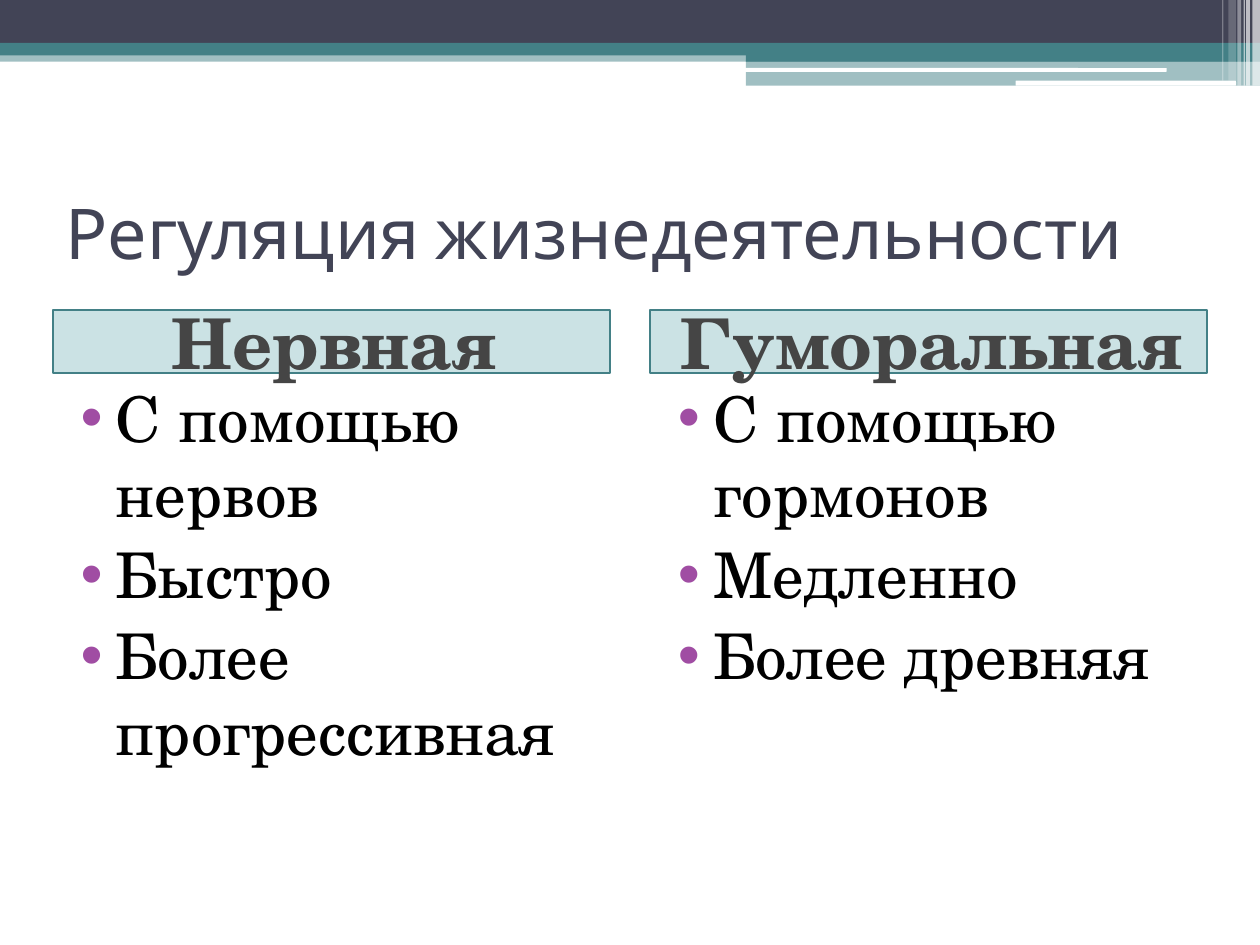
from pptx import Presentation
from pptx.dml.color import RGBColor
from pptx.enum.shapes import MSO_SHAPE as Shape
from pptx.enum.text import MSO_ANCHOR as Anchor, MSO_AUTO_SIZE as Fit, PP_ALIGN as Align
from pptx.oxml.ns import qn
from pptx.util import Inches, Pt
from lxml.etree import SubElement as Sub

TEAL, DARK, WHITE = "438086", "424456", "FFFFFF"
SERIF = "TeX Gyre Schola"
BANDS = [
    (0, 0.4, 10, 0.09, TEAL, 50),
    (0, 0, 10, 0.34, DARK, 100),
    (0, 0.34, 10, 0.1, TEAL, 100),
    (5.92, 0.39, 4.08, 0.1, TEAL, 100),
    (5.92, 0.48, 4.08, 0.2, TEAL, 50),
]
LINES = [(5.91, 0.54, 3.35, 0.03), (8.06, 0.64, 1.75, 0.04)]
STRIPES = [
    (9.94, 0.06, 0.68, 65),
    (9.89, 0.03, 0.68, 65),
    (9.87, 0.01, 0.68, 60),
    (9.82, 0.03, 0.68, 40),
    (9.75, 0.06, 0.64, 20),
    (9.7, 0.01, 0.64, 30),
]
COLUMNS = [
    (0.42, "Нервная", ["С помощью нервов", "Быстро", "Более прогрессивная"]),
    (5.16, "Гуморальная", ["С помощью гормонов", "Медленно", "Более древняя"]),
]
TITLE = {"size": Pt(40), "name": "Karla", "bold": False}
HEAD = {"size": Pt(40), "name": SERIF, "bold": True}
ITEM = {"size": Pt(36), "name": SERIF, "bold": False}


def rgb(code):
    """Turn a hex string into a colour."""
    return RGBColor.from_string(code)


def apply(obj, values):
    """Set each named attribute on an object."""
    for name, value in values.items():
        setattr(obj, name, value)


def place(shape, box):
    """Move and size a shape, in inches."""
    apply(shape, dict(zip(("left", "top", "width", "height"), map(Inches, box))))


def paint(shape, code, alpha=100):
    """Fill a shape with a colour at an opacity in percent."""
    shape.fill.solid()
    shape.fill.fore_color.rgb = rgb(code)
    if alpha < 100:
        color = shape.fill._xPr.find(qn("a:solidFill"))[0]
        Sub(color, qn("a:alpha"), val=str(alpha * 1000))


def bar(slide, box, code, alpha=100, kind=Shape.RECTANGLE):
    """Add a plain bar without outline or shadow."""
    shape = slide.shapes.add_shape(kind, *map(Inches, box))
    shape.shadow.inherit = False
    shape.line.fill.background()
    paint(shape, code, alpha)


def write(holder, box, texts, font, code, anchor, align):
    """Place a placeholder and write its paragraphs."""
    place(holder, box)
    frame = holder.text_frame
    frame.text = "\n".join(texts)
    apply(frame, {"vertical_anchor": anchor, "auto_size": Fit.NONE, "word_wrap": True})
    for para in frame.paragraphs:
        apply(para, {"alignment": align, "space_before": Pt(3)})
        for run in para.runs:
            apply(run.font, font)
            run.font.color.rgb = rgb(code)
    return frame.paragraphs


def indent(para, left, first):
    """Set the left margin and first-line indent, in inches."""
    props = para._p.get_or_add_pPr()
    props.set("marL", str(Inches(left)))
    props.set("indent", str(Inches(first)))
    return props


def bullet(para):
    """Give a paragraph a purple bullet."""
    props = indent(para, 0.4, -0.28)
    Sub(Sub(props, qn("a:buClr")), qn("a:srgbClr"), val="A04DA3")
    Sub(props, qn("a:buFont"), typeface="Arial")
    Sub(props, qn("a:buChar"), char="•")


def heading(holder, left, text):
    """Write a column heading on a tinted box."""
    box = (left, 2.46, 4.42, 0.5)
    paras = write(holder, box, [text], HEAD, "454545", Anchor.MIDDLE, Align.CENTER)
    indent(paras[0], 0.05, 0)
    paint(holder, "328E97", 25)
    holder.line.color.rgb = rgb(TEAL)
    holder.line.width = Pt(1)


def column(holder, left, items):
    """Write the bulleted list of a column."""
    box = (left, 2.96, 4.42, 4.25)
    for para in write(holder, box, items, ITEM, "000000", Anchor.TOP, Align.LEFT):
        bullet(para)


def banner(slide):
    """Draw the bands, lines and stripes along the top."""
    for *box, code, alpha in BANDS:
        bar(slide, box, code, alpha)
    for box in LINES:
        bar(slide, box, WHITE, kind=Shape.ROUNDED_RECTANGLE)
    for left, width, height, alpha in STRIPES:
        bar(slide, (left, 0, width, height), WHITE, alpha)


def main():
    """Build and save the slide."""
    deck = Presentation()
    apply(deck, {"slide_width": Inches(10), "slide_height": Inches(7.5)})
    slide = deck.slides.add_slide(deck.slide_layouts[4])
    banner(slide)
    title, *bodies = list(slide.placeholders)[:5]
    write(title, (0.42, 1.25, 9.17, 1.17), ["Регуляция жизнедеятельности"],
          TITLE, DARK, Anchor.MIDDLE, Align.LEFT)
    for (left, name, items), head, body in zip(COLUMNS, bodies[::2], bodies[1::2]):
        heading(head, left, name)
        column(body, left, items)
    deck.save("out.pptx")


if __name__ == "__main__":
    main()
